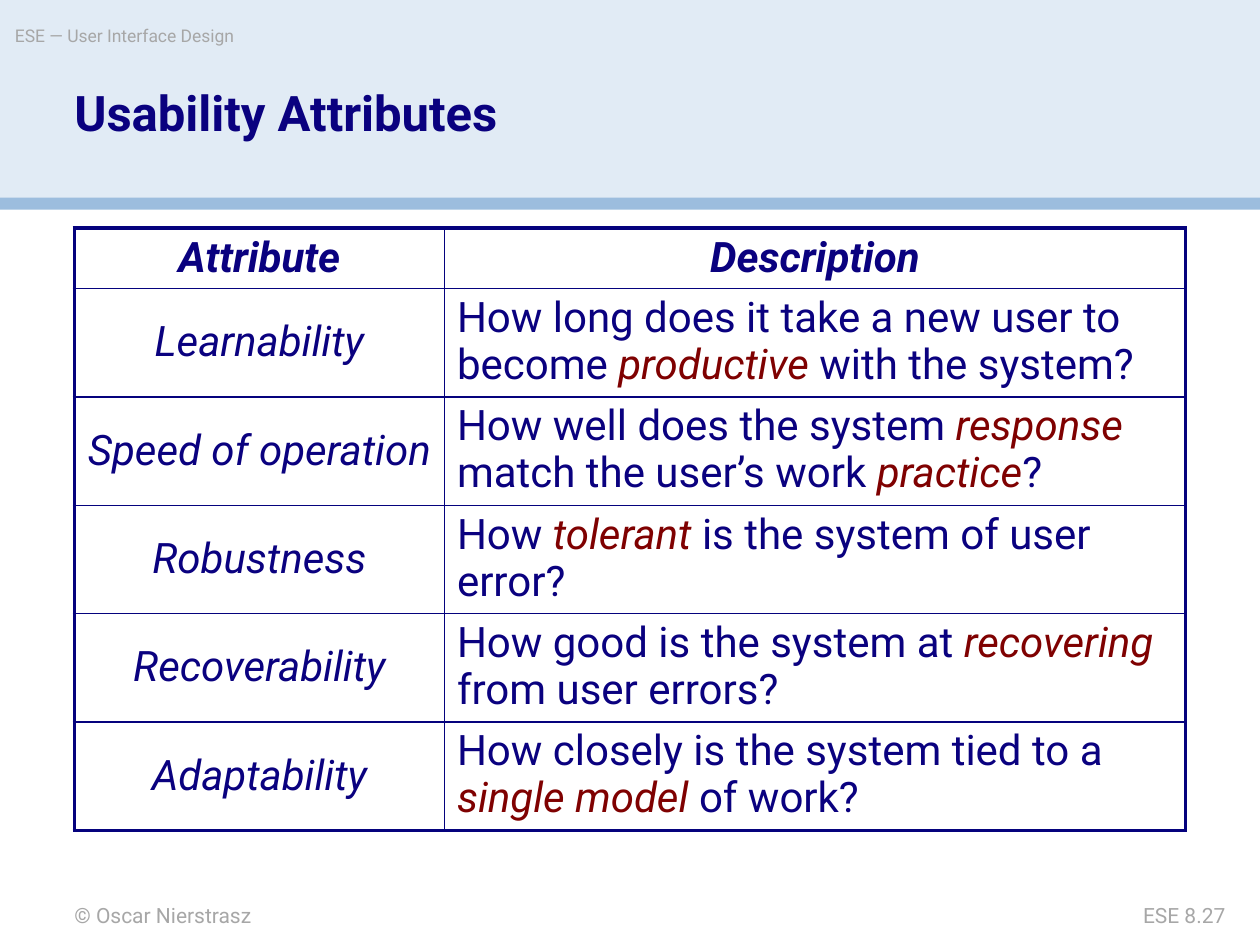
from lxml.etree import SubElement
from pptx import Presentation
from pptx.dml.color import RGBColor
from pptx.enum.shapes import MSO_SHAPE
from pptx.enum.text import MSO_ANCHOR, PP_ALIGN
from pptx.oxml.ns import qn
from pptx.util import Pt

NAVY, RED, GREY = "0A017F", "7F0101", "A7A7A7"
BORDER = "05027D"
BAND, RULE = "E1EBF5", "9CBDDE"

ROWS = [
    ("Attribute", "Description"),
    ("Learnability", "How long does it take a new user to become *productive* with the system?"),
    ("Speed of operation", "How well does the system *response* match the user’s work *practice*?"),
    ("Robustness", "How *tolerant* is the system of user error?"),
    ("Recoverability", "How good is the system at *recovering* from user errors?"),
    ("Adaptability", "How closely is the system tied to a *single model* of work?"),
]


def color(value):
    return RGBColor.from_string(value)


class SlideBuilder:
    font = "Roboto"

    def __init__(self, slide):
        self.slide = slide

    def format_run(self, run, size, fill, bold=False, italic=False):
        run.font.name = self.font
        run.font.size = Pt(size)
        run.font.color.rgb = color(fill)
        run.font.bold = bold
        run.font.italic = italic

    def band(self, top, height, fill):
        shape = self.slide.shapes.add_shape(MSO_SHAPE.RECTANGLE, 0, Pt(top), Pt(720), Pt(height))
        shape.shadow.inherit = False
        shape.fill.solid()
        shape.fill.fore_color.rgb = color(fill)
        shape.line.fill.background()

    def text(self, left, top, width, height, text, size, fill=GREY, bold=False,
             align=PP_ALIGN.LEFT, spacing=1.0):
        frame = self.slide.shapes.add_textbox(Pt(left), Pt(top), Pt(width), Pt(height)).text_frame
        frame.word_wrap = True
        frame.margin_left = frame.margin_right = frame.margin_top = frame.margin_bottom = 0
        frame.text = text
        paragraph = frame.paragraphs[0]
        paragraph.alignment = align
        paragraph.line_spacing = spacing
        self.format_run(paragraph.runs[0], size, fill, bold)

    def borders(self, cell, widths):
        properties = cell._tc.get_or_add_tcPr()
        for side, width in widths.items():
            line = SubElement(properties, qn(f"a:ln{side}"), w=str(Pt(width)))
            fill = SubElement(line, qn("a:solidFill"))
            SubElement(fill, qn("a:srgbClr"), val=BORDER)

    def cell(self, cell, text, heading, centred):
        cell.vertical_anchor = MSO_ANCHOR.MIDDLE if centred else MSO_ANCHOR.TOP
        paragraph = cell.text_frame.paragraphs[0]
        paragraph.alignment = PP_ALIGN.CENTER if centred else PP_ALIGN.LEFT
        paragraph.line_spacing = 0.95
        for index, part in enumerate(text.split("*")):
            emphasis = index % 2 == 1
            run = paragraph.add_run()
            run.text = part
            self.format_run(run, 24, RED if emphasis else NAVY, heading, centred or emphasis)

    def table(self, left, top, column_widths, heading_height, row_height, rows):
        heights = [heading_height] + [row_height] * (len(rows) - 1)
        last_row, last_column = len(rows) - 1, len(column_widths) - 1
        table = self.slide.shapes.add_table(
            len(rows), len(column_widths), Pt(left), Pt(top),
            Pt(sum(column_widths)), Pt(sum(heights))).table
        table.first_row = table.horz_banding = False
        for column, width in zip(table.columns, column_widths):
            column.width = Pt(width)
        for row_index, (height, texts) in enumerate(zip(heights, rows)):
            table.rows[row_index].height = Pt(height)
            for column_index, text in enumerate(texts):
                cell = table.cell(row_index, column_index)
                heading = row_index == 0
                self.cell(cell, text, heading, heading or column_index == 0)
                outer = {"L": column_index == 0, "R": column_index == last_column,
                         "T": heading, "B": row_index == last_row}
                self.borders(cell, {side: 2.25 if edge else 1 for side, edge in outer.items()})
                cell.fill.background()


def main():
    presentation = Presentation()
    presentation.slide_width, presentation.slide_height = Pt(720), Pt(540)
    builder = SlideBuilder(presentation.slides.add_slide(presentation.slide_layouts[6]))
    builder.band(0, 113.8, BAND)
    builder.band(113, 6.8, RULE)
    builder.text(42.5, 515.8, 300, 14.4, "© Oscar Nierstrasz", 12)
    builder.text(8.5, 14.4, 425, 20, "ESE — User Interface Design", 10)
    builder.text(594, 516, 106.3, 14.4, "ESE 8.27", 12, align=PP_ALIGN.RIGHT)
    builder.text(42.5, 51, 521, 64, "Usability Attributes", 28, NAVY, True, spacing=0.9)
    builder.table(42.5, 130.3, [211.5, 423.5], 33.9, 60.7, ROWS)
    presentation.save("out.pptx")


if __name__ == "__main__":
    main()
